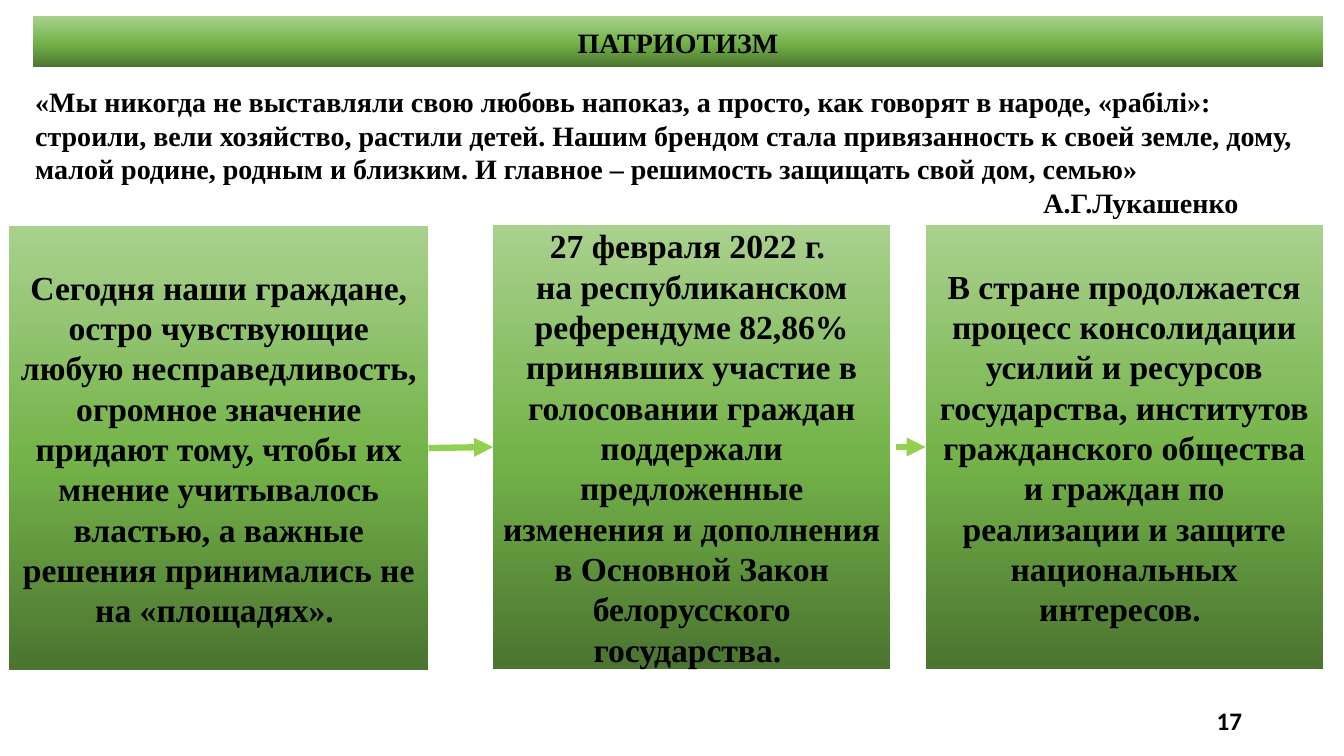
from copy import deepcopy

from pptx import Presentation
from pptx.dml.color import RGBColor
from pptx.enum.shapes import MSO_CONNECTOR, MSO_SHAPE
from pptx.enum.text import MSO_ANCHOR, MSO_AUTO_SIZE, PP_ALIGN
from pptx.oxml.ns import qn
from pptx.oxml.xmlchemy import OxmlElement
from pptx.util import Inches, Pt

COLORS = {"dark": "4B7430", "mid": "74B349", "light": "A9D18E",
          "arrow": "92D050", "text": "000000"}


def write(sp, *paragraphs, size=20, font="Times New Roman",
          align=PP_ALIGN.CENTER, anchor=MSO_ANCHOR.MIDDLE):
    tf = sp.text_frame
    tf.word_wrap = True
    tf.auto_size = MSO_AUTO_SIZE.NONE
    tf.vertical_anchor = anchor
    for i, text in enumerate(paragraphs):
        p = tf.add_paragraph() if i else tf.paragraphs[0]
        p.text = text
        p.alignment = align
        for r in p.runs:
            r.font.size = Pt(size)
            r.font.name = font
            r.font.bold = True
            r.font.color.rgb = RGBColor.from_string(COLORS["text"])
    return tf


def fill_green(sp):
    """Fill with a three-stop gradient, dark at the bottom."""
    sp.fill.gradient()
    sp.fill.gradient_angle = 90
    stop_list = sp._element.spPr.find(qn("a:gradFill")).find(qn("a:gsLst"))
    stop_list.append(deepcopy(stop_list[0]))
    shades = [(0, "dark"), (0.48, "mid"), (1, "light")]
    for stop, (position, name) in zip(sp.fill.gradient_stops, shades):
        stop.position = position
        stop.color.rgb = RGBColor.from_string(COLORS[name])
    sp.line.fill.background()


prs = Presentation()
prs.slide_width, prs.slide_height = Inches(13.33), Inches(7.5)
slide = prs.slides.add_slide(prs.slide_layouts[5])
shapes = slide.shapes

# Title bar
title = shapes.title
title.left, title.top = Inches(0.33), Inches(0.16)
title.width, title.height = Inches(12.79), Inches(0.51)
fill_green(title)
write(title, "ПАТРИОТИЗМ")

# Quotation and its author
quote = shapes.add_textbox(Inches(0.25), Inches(0.79), Inches(12.87), Inches(1.45))
tf = write(
    quote,
    "«Мы никогда не выставляли свою любовь напоказ, а просто, как говорят в народе, "
    "«рабiлi»: строили, вели хозяйство, растили детей. Нашим брендом стала "
    "привязанность к своей земле, дому, малой родине, родным и близким. И главное – "
    "решимость защищать свой дом, семью»",
    "А.Г.Лукашенко",
    align=PP_ALIGN.LEFT, anchor=MSO_ANCHOR.TOP)
tf.paragraphs[1]._p.get_or_add_pPr().set("marL", str(Inches(10)))

# Three statements
statements = [
    (0.09, 2.24, 4.16,
     "Сегодня наши граждане, остро чувствующие любую несправедливость, огромное "
     "значение придают тому, чтобы их мнение учитывалось властью, а важные решения "
     "принимались не на «площадях». "),
    (4.89, 2.23, 3.94,
     "27 февраля 2022 г. \vна республиканском референдуме 82,86% принявших участие "
     "в голосовании граждан поддержали предложенные изменения и дополнения в "
     "Основной Закон белорусского государства. "),
    (9.18, 2.23, 3.94,
     "В стране продолжается процесс консолидации усилий и ресурсов государства, "
     "институтов гражданского общества и граждан по реализации и защите "
     "национальных интересов. "),
]
boxes = []
for left, top, width, text in statements:
    sp = shapes.add_shape(MSO_SHAPE.RECTANGLE, Inches(left), Inches(top),
                          Inches(width), Inches(4.41))
    sp.shadow.inherit = False
    fill_green(sp)
    write(sp, text, size=24)
    boxes.append(sp)

# Arrows between the statements
for start, target in [(4.25, boxes[1]), (8.89, boxes[2])]:
    middle = target.top + target.height // 2
    arrow = shapes.add_connector(MSO_CONNECTOR.STRAIGHT, Inches(start), middle,
                                 target.left, middle)
    if target is boxes[1]:
        arrow.begin_connect(boxes[0], 3)
    arrow.end_connect(target, 1)
    arrow.line.width = Pt(4.5)
    arrow.line.color.rgb = RGBColor.from_string(COLORS["arrow"])
    head = OxmlElement("a:tailEnd")
    head.set("type", "triangle")
    arrow.line._get_or_add_ln().append(head)
    arrow._element.spPr.append(OxmlElement("a:effectLst"))

# Page number
number = shapes.add_textbox(Inches(9.42), Inches(6.95), Inches(3), Inches(0.4))
write(number, "17", size=18, font="Calibri", align=PP_ALIGN.RIGHT)

prs.save("out.pptx")
